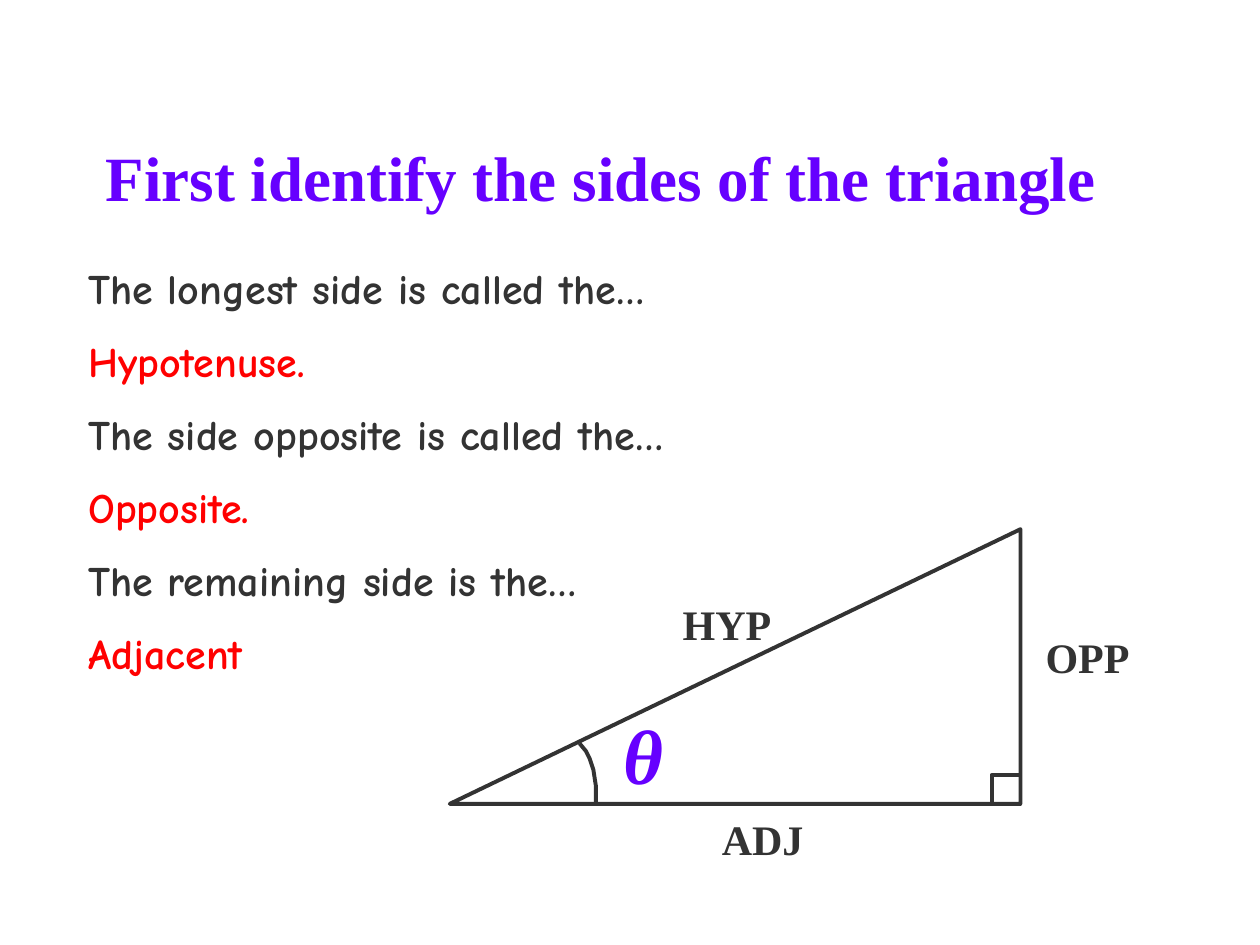
import pptx
import pptx.dml.color
import pptx.enum.shapes
import pptx.enum.text
import pptx.oxml.ns
import pptx.util
import lxml.etree

EMU_PER_PX = 9144  # 100 px to the inch
INK, RED, VIOLET = "333333", "FF0000", "6600FF"
SERIF, COMIC = "Times New Roman", "Comic Neue"
SHAPES = pptx.enum.shapes.MSO_SHAPE
AUTO_SIZE = pptx.enum.text.MSO_AUTO_SIZE
ALIGN = pptx.enum.text.PP_ALIGN
ANCHOR = pptx.enum.text.MSO_ANCHOR


def px(length):
    return pptx.util.Emu(length * EMU_PER_PX)


def color(hex_string):
    return pptx.dml.color.RGBColor.from_string(hex_string)


def apply(target, values):
    for name, value in values.items():
        setattr(target, name, value)


class SlideBuilder:
    """Holds the style and the current slide."""

    line_width = pptx.util.Pt(2.25)
    line_gap = pptx.util.Pt(13)

    def __init__(self, slide):
        self.slide = slide

    def place(self, shape, left, top, width, height):
        apply(shape, {"left": px(left), "top": px(top),
                      "width": px(width), "height": px(height)})

    def add_text(self, paragraph, text, size, font, ink, **extra):
        run = paragraph.add_run()
        run.text = text
        apply(run.font, {"size": pptx.util.Pt(size), "name": font, "bold": True, **extra})
        run.font.color.rgb = color(ink)

    def title(self, text, box):
        shape = self.slide.shapes.title
        self.place(shape, *box)
        apply(shape.text_frame, {"vertical_anchor": ANCHOR.BOTTOM, "word_wrap": True,
                                 "auto_size": AUTO_SIZE.NONE})
        paragraph = shape.text_frame.paragraphs[0]
        paragraph.alignment = ALIGN.CENTER
        self.add_text(paragraph, text, 36, SERIF, VIOLET)

    def body(self, lines, box):
        shape = self.slide.placeholders[1]
        self.place(shape, *box)
        frame = shape.text_frame
        apply(frame, {"word_wrap": True, "auto_size": AUTO_SIZE.SHAPE_TO_FIT_TEXT})
        for index, (text, ink) in enumerate(lines):
            paragraph = frame.add_paragraph() if index else frame.paragraphs[0]
            paragraph.space_before = self.line_gap
            # Plain lines: no bullet and no hanging indent
            properties = paragraph._p.get_or_add_pPr()
            properties.set("marL", "0")
            properties.set("indent", "0")
            lxml.etree.SubElement(properties, pptx.oxml.ns.qn("a:buNone"))
            self.add_text(paragraph, text, 24, COMIC, ink)

    def label(self, text, box, size=24, ink=INK, **extra):
        frame = self.slide.shapes.add_textbox(*map(px, box)).text_frame
        apply(frame, {"word_wrap": True, "auto_size": AUTO_SIZE.SHAPE_TO_FIT_TEXT})
        self.add_text(frame.paragraphs[0], text, size, SERIF, ink, **extra)

    def outline(self, shape):
        shape.shadow.inherit = False
        shape.fill.background()
        shape.line.color.rgb = color(INK)
        shape.line.width = self.line_width

    def preset(self, kind, box, mirrored=False):
        shape = self.slide.shapes.add_shape(kind, *map(px, box))
        if mirrored:
            shape._element.spPr.xfrm.set("flipH", "1")
        self.outline(shape)

    def curve(self, points):
        builder = self.slide.shapes.build_freeform(*points[0], scale=EMU_PER_PX)
        builder.add_line_segments(points[1:], close=False)
        self.outline(builder.convert_to_shape())


def main():
    presentation = pptx.Presentation()
    apply(presentation, {"slide_width": px(1000), "slide_height": px(750)})
    slide = presentation.slides.add_slide(presentation.slide_layouts[1])
    builder = SlideBuilder(slide)

    # Title, then prompts with their answers
    builder.title("First identify the sides of the triangle", (52, 98, 850, 77))
    builder.body([
        ("The longest side is called the…", INK),
        ("Hypotenuse.", RED),
        ("The side opposite is called the…", INK),
        ("Opposite.", RED),
        ("The remaining side is the…", INK),
        ("Adjacent", RED),
    ], (60, 203, 618, 349))

    # Right triangle with its square corner and angle arc
    left, top, width, height = 357, 420, 453, 218
    right, bottom, corner = left + width, top + height, 23
    builder.preset(SHAPES.RIGHT_TRIANGLE, (left, top, width, height), mirrored=True)
    builder.preset(SHAPES.RECTANGLE, (right - corner, bottom - corner, corner, corner))
    builder.curve([(473, bottom), (473, 624), (471, 611), (468, 602), (465, 596), (460, 590)])

    # Names of the sides and the angle
    builder.label("OPP", (820, 496, 89, 50))
    builder.label("ADJ", (563, 641, 89, 50))
    builder.label("HYP", (532, 470, 106, 50))
    builder.label("θ", (485, 557, 89, 84), size=44, ink=VIOLET, italic=True)

    presentation.save("out.pptx")


if __name__ == "__main__":
    main()
